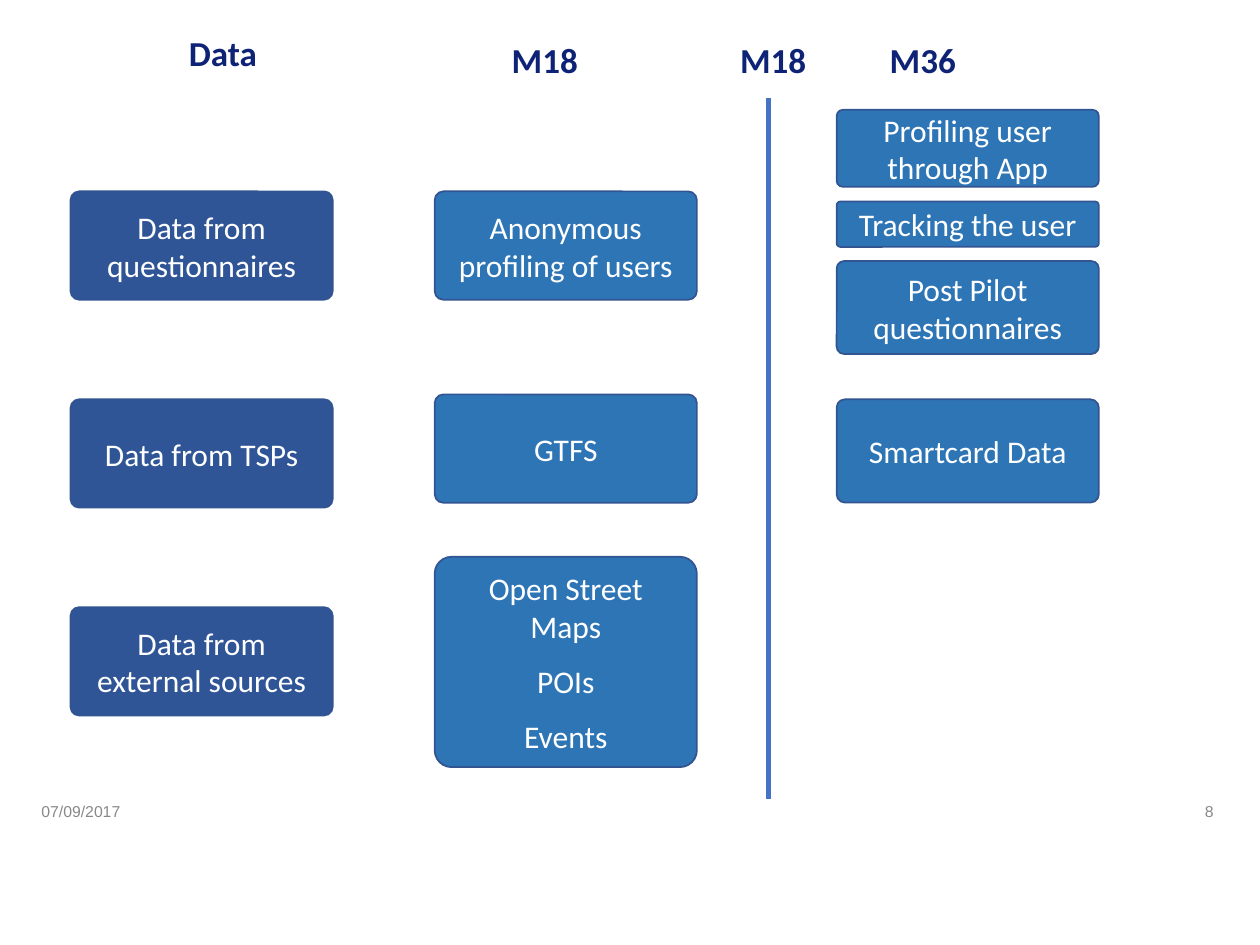
"""Build the slide of data sources used by month 18 and by month 36."""
from lxml.etree import SubElement
from pptx import Presentation
from pptx.dml.color import RGBColor
from pptx.enum.shapes import MSO_CONNECTOR, MSO_SHAPE
from pptx.enum.text import MSO_ANCHOR, PP_ALIGN
from pptx.oxml.ns import qn
from pptx.util import Pt

COLORS = {
    "source": "2F5597",
    "item": "2E75B6",
    "outline": "325491",
    "divider": "4472C4",
    "heading": "0E2376",
    "footer": "898989",
    "white": "FFFFFF",
}
BOX_WIDTH = 149.8
SOURCE_LEFT, MONTH_18_LEFT, MONTH_36_LEFT = 40.3, 248.4, 478.1
SOURCE_TOP, SOURCE_PITCH, SOURCE_HEIGHT = 109.4, 118.8, 61.9


def style_paragraph(paragraph, name, size, color, alignment=PP_ALIGN.LEFT):
    paragraph.alignment = alignment
    paragraph.font.name = name
    paragraph.font.size = Pt(size)
    paragraph.font.color.rgb = RGBColor.from_string(COLORS[color])


def add_text(left, top, width, height, text, anchor):
    text_box = slide.shapes.add_textbox(Pt(left), Pt(top), Pt(width), Pt(height))
    text_box.text_frame.word_wrap = True
    text_box.text_frame.vertical_anchor = anchor
    paragraph = text_box.text_frame.paragraphs[0]
    paragraph.add_run().text = text
    return paragraph


presentation = Presentation()
presentation.slide_width, presentation.slide_height = Pt(720), Pt(540)
slide = presentation.slides.add_slide(presentation.slide_layouts[6])

footers = [
    (16.6, "07/09/2017", PP_ALIGN.LEFT),
    (572.4, "8", PP_ALIGN.RIGHT),
]
for left, text, alignment in footers:
    paragraph = add_text(left, 449.3, 128.2, 28.8, text, MSO_ANCHOR.MIDDLE)
    style_paragraph(paragraph, "Arial", 9, "footer", alignment)

headings = [
    (100.8, 17.3, 612, "Data", []),
    (244.8, 20.9, 402.5, "\tM18\tM18\tM36", [40.5, 171, 256.5]),
]
for left, top, width, text, tab_stops in headings:
    paragraph = add_text(left, top, width, 51.8, text, MSO_ANCHOR.TOP)
    paragraph.line_spacing = 0.9
    if tab_stops:
        tab_list = SubElement(paragraph._p.get_or_add_pPr(), qn("a:tabLst"))
        for position in tab_stops:
            SubElement(tab_list, qn("a:tab"), pos=str(Pt(position)), algn="l")
    style_paragraph(paragraph, "Calibri", 20, "heading")
    paragraph.font.bold = True

divider = slide.shapes.add_connector(
    MSO_CONNECTOR.STRAIGHT, Pt(439.2), Pt(456.5), Pt(439.2), Pt(56.2))
divider.line.color.rgb = RGBColor.from_string(COLORS["divider"])
divider.line.width = Pt(2.5)
SubElement(divider._element.spPr, qn("a:effectLst"))

sources = ["Data from questionnaires", "Data from TSPs", "Data from external sources"]
boxes = [
    (SOURCE_LEFT, SOURCE_TOP + row * SOURCE_PITCH, SOURCE_HEIGHT, "source", [text])
    for row, text in enumerate(sources)
]
boxes += [
    (MONTH_18_LEFT, SOURCE_TOP, SOURCE_HEIGHT, "item", ["Anonymous profiling of users"]),
    (MONTH_18_LEFT, 225.4, SOURCE_HEIGHT, "item", ["GTFS"]),
    (MONTH_18_LEFT, 318.2, 120.2, "item", ["Open Street Maps", "POIs", "Events"]),
    (MONTH_36_LEFT, 62.8, 44, "item", ["Profiling user through App"]),
    (MONTH_36_LEFT, 115.2, 25.9, "item", ["Tracking the user"]),
    (MONTH_36_LEFT, 149.2, 53.1, "item", ["Post Pilot questionnaires"]),
    (MONTH_36_LEFT, 228.2, 59, "item", ["Smartcard Data"]),
]
for left, top, height, color, lines in boxes:
    shape = slide.shapes.add_shape(
        MSO_SHAPE.ROUNDED_RECTANGLE, Pt(left), Pt(top), Pt(BOX_WIDTH), Pt(height))
    shape.adjustments[0] = 0.08
    shape.shadow.inherit = False
    shape.fill.solid()
    shape.fill.fore_color.rgb = RGBColor.from_string(COLORS[color])
    shape.line.color.rgb = RGBColor.from_string(COLORS["outline"])
    shape.line.width = Pt(1)
    text_frame = shape.text_frame
    text_frame.word_wrap = True
    text_frame.vertical_anchor = MSO_ANCHOR.MIDDLE
    text_frame.text = "\n".join(lines)
    for index, paragraph in enumerate(text_frame.paragraphs):
        if index:
            paragraph.space_before = Pt(9.75)
        style_paragraph(paragraph, "Calibri", 18, "white", PP_ALIGN.CENTER)

presentation.save("out.pptx")
